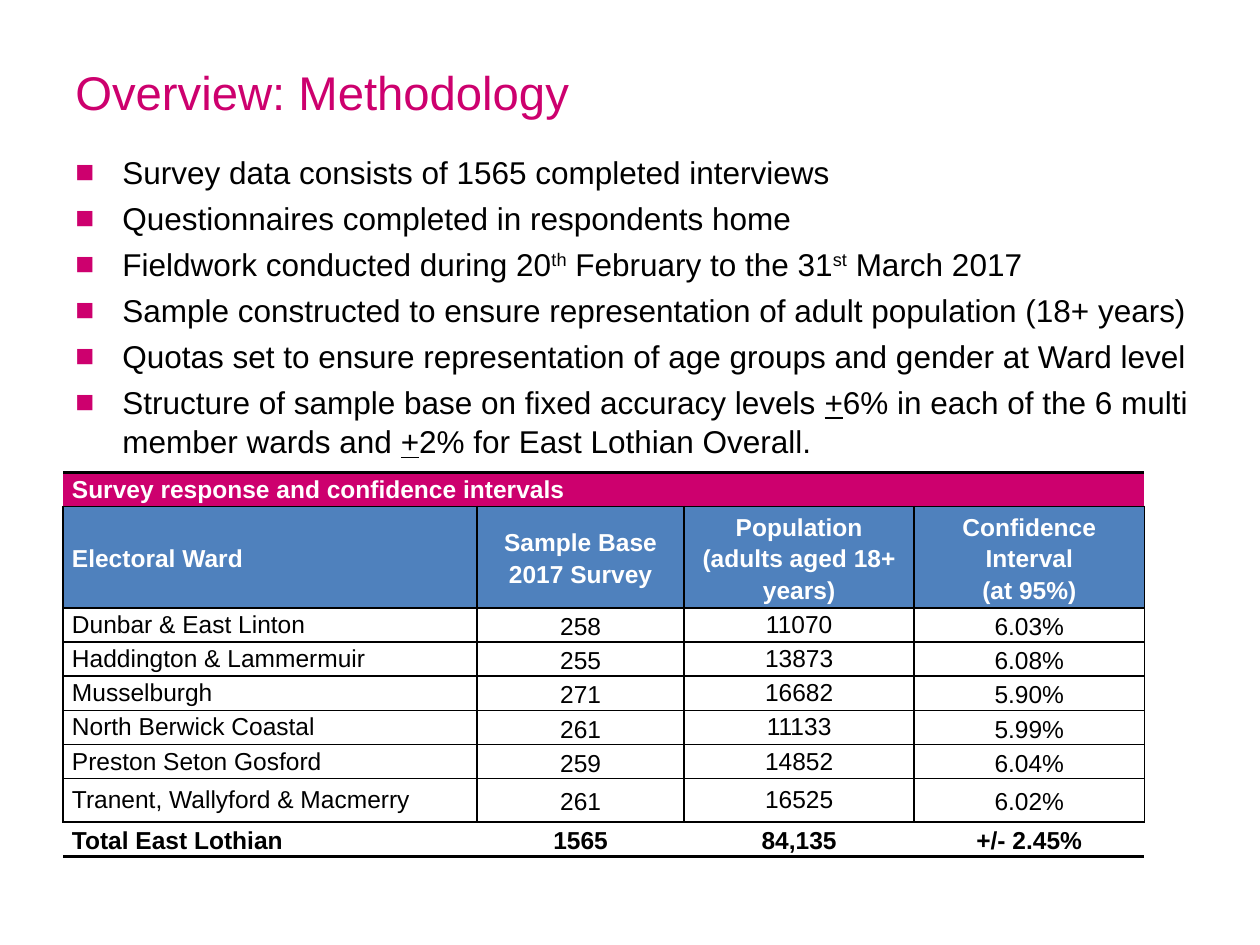
from lxml.etree import SubElement
from pptx import Presentation
from pptx.dml.color import RGBColor
from pptx.enum.text import MSO_ANCHOR as Anchor, PP_ALIGN as Align
from pptx.oxml.ns import qn
from pptx.util import Cm, Pt

FONT = "Arial"
COLORS = {"magenta": "CD006E", "blue": "4F81BD", "black": "000000", "white": "FFFFFF"}

BULLETS = [
    [("Survey data consists of 1565 completed interviews", "")],
    [("Questionnaires completed in respondents home", "")],
    [("Fieldwork conducted during 20", ""), ("th", "super"),
     (" February to the 31", ""), ("st", "super"), (" March 2017", "")],
    [("Sample constructed to ensure representation of adult population (18+ years)", "")],
    [("Quotas set to ensure representation of age groups and gender at Ward level", "")],
    [("Structure of sample base on fixed accuracy levels ", ""), ("+", "underline"),
     ("6% in each of the 6 multi member wards and ", ""), ("+", "underline"),
     ("2% for East Lothian Overall.", "")],
]

CAPTION = "Survey response and confidence intervals"
HEADER = ["Electoral Ward", "Sample Base\n2017 Survey",
          "Population\n(adults aged 18+ years)", "Confidence Interval\n(at 95%)"]
WARDS = [
    ["Dunbar & East Linton", "258", "11070", "6.03%"],
    ["Haddington & Lammermuir", "255", "13873", "6.08%"],
    ["Musselburgh", "271", "16682", "5.90%"],
    ["North Berwick Coastal", "261", "11133", "5.99%"],
    ["Preston Seton Gosford", "259", "14852", "6.04%"],
    ["Tranent, Wallyford & Macmerry", "261", "16525", "6.02%"],
]
TOTAL = ["Total East Lothian", "1565", "84,135", "+/- 2.45%"]
COLUMN_WIDTHS = [8.35, 4.17, 4.64, 4.64]
ROW_HEIGHTS = [0.69, 2.03] + [0.69] * 5 + [0.87, 0.69]

GRID = {"L": 1, "R": 1, "T": 1, "B": 1}
CAPTION_EDGES = {"L": 0, "R": 0, "T": 2, "B": 1}
TOTAL_EDGES = {"L": 0, "R": 0, "T": 1, "B": 2}


def style_span(span, size, color, bold=False):
    font = span.font
    font.name, font.size, font.bold = FONT, Pt(size), bold
    font.color.rgb = RGBColor.from_string(COLORS[color])


def add_box(page, left, top, width, height, anchor):
    frame = page.shapes.add_textbox(Cm(left), Cm(top), Cm(width), Cm(height)).text_frame
    frame.word_wrap = True
    frame.vertical_anchor = anchor
    return frame


def add_title(page, text):
    frame = add_box(page, 1.27, 0.76, 22.86, 2.16, Anchor.MIDDLE)
    frame.text = text
    style_span(frame.paragraphs[0].runs[0], 27, "magenta")


def set_bullet(para):
    properties = para._p.get_or_add_pPr()
    properties.set("marL", str(Cm(0.95)))
    properties.set("indent", str(Cm(-0.95)))
    color = SubElement(properties, qn("a:buClr"))
    SubElement(color, qn("a:srgbClr"), val=COLORS["magenta"])
    SubElement(properties, qn("a:buFont"), typeface=FONT)
    SubElement(properties, qn("a:buChar"), char="■")


def add_bullets(page, items):
    frame = add_box(page, 1.27, 2.92, 24.13, 7.21, Anchor.TOP)
    for index, item in enumerate(items):
        para = frame.add_paragraph() if index else frame.paragraphs[0]
        set_bullet(para)
        para.line_spacing = 1.05
        para.space_before = Pt(3.6 if index else 0)
        for text, effect in item:
            span = para.add_run()
            span.text = text
            style_span(span, 18, "black")
            if effect == "underline":
                span.font.underline = True
            elif effect == "super":
                span.font._element.set("baseline", "30000")


def set_borders(cell, edges):
    """Draw each edge at its width in points; zero means no line."""
    properties = cell._tc.get_or_add_tcPr()
    for side, width in edges.items():
        line = SubElement(properties, qn(f"a:ln{side}"), w=str(Pt(width)))
        if width:
            fill = SubElement(line, qn("a:solidFill"))
            SubElement(fill, qn("a:srgbClr"), val=COLORS["black"])
        else:
            SubElement(line, qn("a:noFill"))


def fill_cell(cell, text, edges, align, spacing, color="black", bold=False, fill=None,
              anchor=Anchor.MIDDLE):
    cell.text = text
    cell.vertical_anchor = anchor
    cell.margin_left = cell.margin_right = Cm(0.18)
    cell.margin_top = cell.margin_bottom = 0
    set_borders(cell, edges)
    if fill:
        cell.fill.solid()
        cell.fill.fore_color.rgb = RGBColor.from_string(COLORS[fill])
    else:
        cell.fill.background()
    for para in cell.text_frame.paragraphs:
        para.alignment, para.line_spacing = align, spacing
        for span in para.runs:
            style_span(span, 14, color, bold)


def add_ward_table(page):
    table = page.shapes.add_table(
        len(ROW_HEIGHTS), len(COLUMN_WIDTHS), Cm(1.27), Cm(9.52),
        Cm(sum(COLUMN_WIDTHS)), Cm(sum(ROW_HEIGHTS))).table
    table.first_row = table.horz_banding = False
    for column, width in zip(table.columns, COLUMN_WIDTHS):
        column.width = Cm(width)
    for row, height in zip(table.rows, ROW_HEIGHTS):
        row.height = Cm(height)

    caption_style = dict(color="white", bold=True, fill="magenta", anchor=Anchor.TOP)
    table.cell(0, 0).merge(table.cell(0, 3))
    for column in range(len(COLUMN_WIDTHS)):
        align = Align.CENTER if column else Align.LEFT
        fill_cell(table.cell(0, column), "" if column else CAPTION, CAPTION_EDGES,
                  Align.LEFT, 1.15, **caption_style)
        fill_cell(table.cell(1, column), HEADER[column], GRID, align, 1.15,
                  color="white", bold=True, fill="blue")
        for row, ward in enumerate(WARDS, start=2):
            fill_cell(table.cell(row, column), ward[column], GRID, align,
                      1.15 if column % 2 else 1.0)
        fill_cell(table.cell(len(WARDS) + 2, column), TOTAL[column], TOTAL_EDGES,
                  align, 1.15, bold=True)


def main():
    deck = Presentation()
    deck.slide_width, deck.slide_height = Cm(25.4), Cm(19.05)
    page = deck.slides.add_slide(deck.slide_layouts[6])
    add_title(page, "Overview: Methodology")
    add_bullets(page, BULLETS)
    add_ward_table(page)
    deck.save("out.pptx")


if __name__ == "__main__":
    main()
